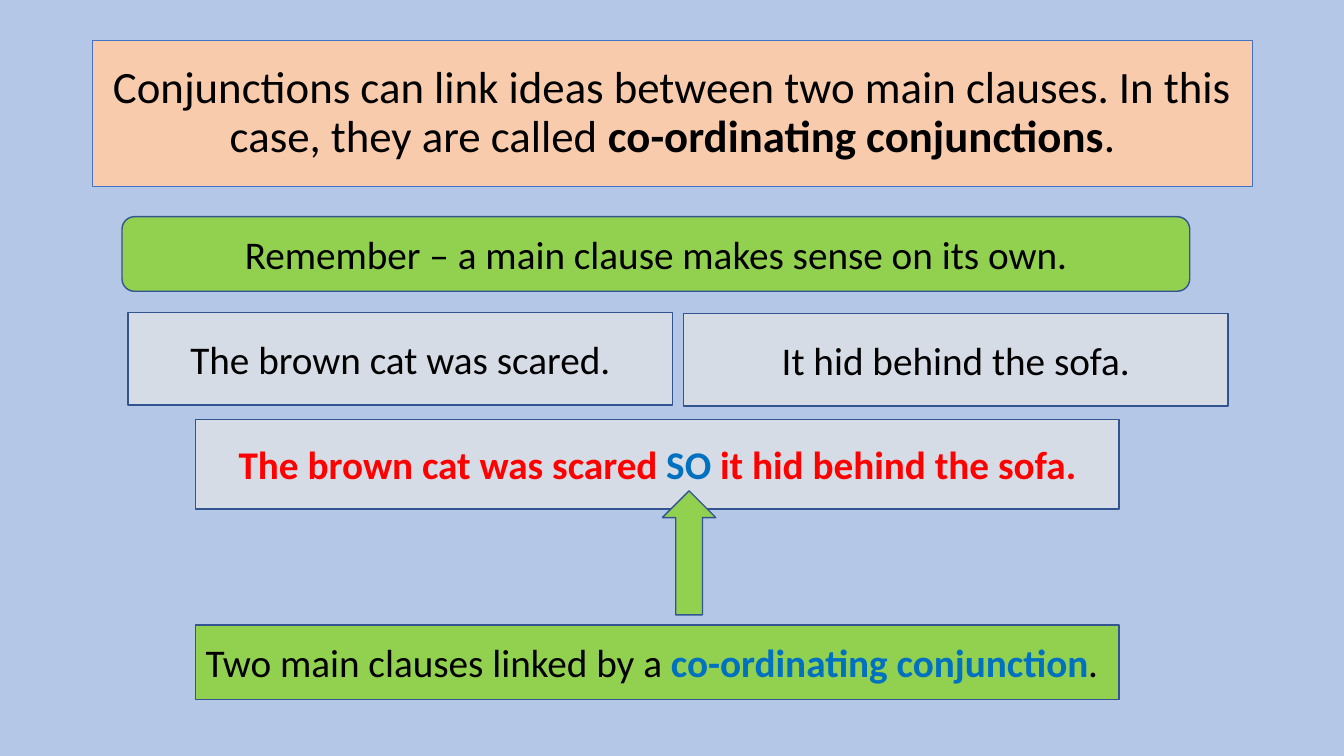
import pptx
import pptx.dml.color
import pptx.enum.shapes
import pptx.enum.text
import pptx.util

RGBColor = pptx.dml.color.RGBColor
Inches = pptx.util.Inches
Pt = pptx.util.Pt
SHAPE = pptx.enum.shapes.MSO_SHAPE
ALIGN = pptx.enum.text.PP_ALIGN

SKY = RGBColor(0xB4, 0xC7, 0xE7)
PEACH = RGBColor(0xF8, 0xCB, 0xAD)
GREEN = RGBColor(0x92, 0xD0, 0x50)
GREY = RGBColor(0xD6, 0xDC, 0xE5)
TITLE_EDGE = RGBColor(0x44, 0x72, 0xC4)
EDGE = RGBColor(0x32, 0x54, 0x91)
BLACK = RGBColor(0x00, 0x00, 0x00)
RED = RGBColor(0xFF, 0x00, 0x00)
BLUE = RGBColor(0x00, 0x70, 0xC0)


class Lesson:
    font = "Calibri"

    def __init__(self, prs):
        self.slide = prs.slides.add_slide(prs.slide_layouts[6])
        fill = self.slide.background.fill
        fill.solid()
        fill.fore_color.rgb = SKY

    def shape(self, kind, box, fill, edge=EDGE, width=1):
        sp = self.slide.shapes.add_shape(kind, *map(Inches, box))
        sp.shadow.inherit = False
        sp.fill.solid()
        sp.fill.fore_color.rgb = fill
        sp.line.color.rgb = edge
        sp.line.width = Pt(width)
        return sp

    def add_text(self, sp, parts, size=28, align=ALIGN.CENTER, spacing=None):
        """Fill a shape with one paragraph of (text, colour, bold) parts."""
        tf = sp.text_frame
        tf.word_wrap = True
        tf.vertical_anchor = pptx.enum.text.MSO_ANCHOR.MIDDLE
        p = tf.paragraphs[0]
        p.alignment = align
        p.line_spacing = spacing
        for text, color, bold in parts:
            r = p.add_run()
            r.text = text
            r.font.name = self.font
            r.font.size = Pt(size)
            r.font.bold = bold
            r.font.color.rgb = color

    def title(self, box, parts):
        sp = self.shape(SHAPE.RECTANGLE, box, PEACH, TITLE_EDGE, 0.75)
        self.add_text(sp, parts, size=32, spacing=0.9)

    def panel(self, box, fill, parts, kind=SHAPE.RECTANGLE, align=ALIGN.CENTER):
        self.add_text(self.shape(kind, box, fill), parts, align=align)

    def arrow(self, box):
        self.shape(SHAPE.UP_ARROW, box, GREEN)


def main():
    prs = pptx.Presentation()
    prs.slide_width = Inches(13.33)
    prs.slide_height = Inches(7.5)
    s = Lesson(prs)

    s.title((0.92, 0.4, 11.5, 1.45), [
        ("Conjunctions can link ideas between two main clauses. "
         "In this case, they are called ", BLACK, False),
        ("co-ordinating conjunctions", BLACK, True),
        (".", BLACK, False),
    ])
    s.panel((1.21, 2.15, 10.59, 0.74), GREEN,
            [("Remember – a main clause makes sense on its own.", BLACK, False)],
            kind=SHAPE.ROUNDED_RECTANGLE)

    clauses = [(1.27, 3.1, "The brown cat was scared."),
               (6.78, 3.11, "It hid behind the sofa.")]
    for left, top, clause in clauses:
        s.panel((left, top, 5.4, 0.92), GREY, [(clause, BLACK, False)])

    s.panel((1.94, 4.16, 9.16, 0.89), GREY, [
        ("The brown cat was scared ", RED, True),
        ("SO ", BLUE, True),
        ("it hid behind the sofa.", RED, True),
    ])
    s.arrow((6.57, 4.87, 0.53, 1.23))
    s.panel((1.94, 6.2, 9.16, 0.74), GREEN, [
        ("Two main clauses linked by a ", BLACK, False),
        ("co-ordinating conjunction", BLUE, True),
        (".", BLACK, False),
    ], align=ALIGN.LEFT)

    prs.save("out.pptx")


if __name__ == "__main__":
    main()
